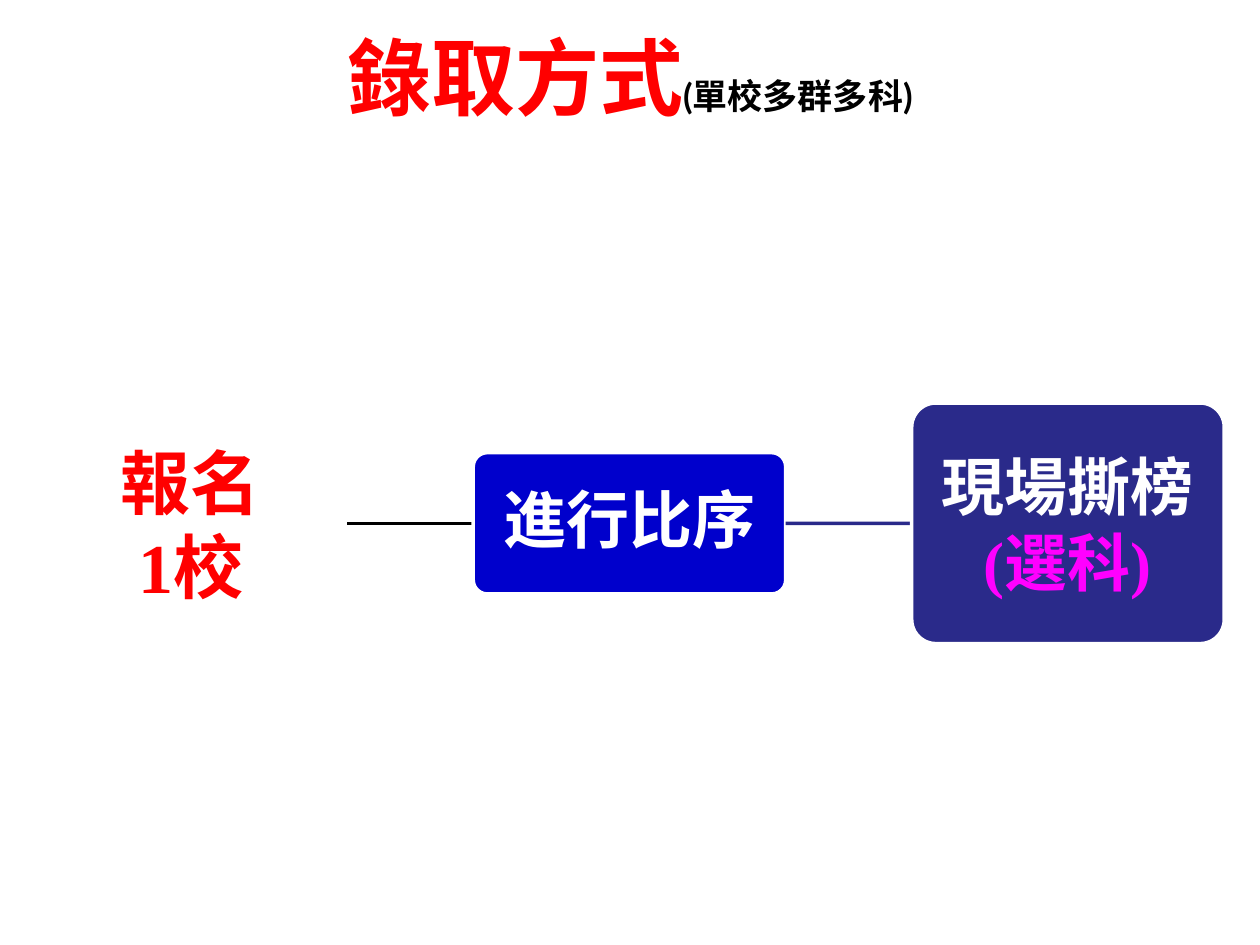
from dataclasses import dataclass

from lxml.etree import SubElement
from pptx import Presentation
from pptx.dml.color import RGBColor
from pptx.enum.shapes import MSO_CONNECTOR, MSO_SHAPE
from pptx.enum.text import MSO_ANCHOR, PP_ALIGN
from pptx.oxml.ns import qn
from pptx.util import Cm, Pt

WHITE, BLACK, RED = "FFFFFF", "000000", "FF0000"
BLUE, NAVY, MAGENTA = "0000CC", "2A2A8A", "FF00FF"

# Flow geometry in centimetres
FLOW_LEFT, FLOW_MIDDLE = 0.7, 10.55
STEP_WIDTH, STEP_PITCH = 6.3, 8.84
RIGHT_SIDE, LEFT_SIDE = 3, 1


@dataclass
class Step:
    lines: list[tuple[str, str]]  # wording and colour
    height: float
    fill: str
    size: int
    inset: float
    spacing: float = 1.0
    link: str | None = None  # colour of the line to the next step


STEPS = [
    Step([("報名", RED), ("1校", RED)], 6.45, WHITE, 40, 0.25, link=BLACK),
    Step([("進行比序", WHITE)], 2.85, BLUE, 36, 0.13, spacing=0.9, link=NAVY),
    Step([("現場撕榜", WHITE), ("(選科)", MAGENTA)], 4.85, NAVY, 36, 0.18),
]


def rgb(value: str) -> RGBColor:
    return RGBColor.from_string(value)


def add_text(paragraph, wording: str, *, size: int, color: str, font: str) -> None:
    run = paragraph.add_run()
    run.text = wording
    run.font.size = Pt(size)
    run.font.name = font
    run.font.bold = True
    run.font.color.rgb = rgb(color)


def set_frame(frame, inset: float) -> None:
    frame.word_wrap = True
    frame.vertical_anchor = MSO_ANCHOR.MIDDLE
    frame.margin_left = frame.margin_right = Cm(inset)
    frame.margin_top = frame.margin_bottom = Cm(inset)


def add_step(slide, step: Step, left: float):
    box = slide.shapes.add_shape(
        MSO_SHAPE.ROUNDED_RECTANGLE, Cm(left), Cm(FLOW_MIDDLE - step.height / 2),
        Cm(STEP_WIDTH), Cm(step.height))
    box.adjustments[0] = 0.1
    box.shadow.inherit = False
    box.fill.solid()
    box.fill.fore_color.rgb = rgb(step.fill)
    box.line.color.rgb = rgb(WHITE)
    box.line.width = Pt(2)
    frame = box.text_frame
    set_frame(frame, step.inset)
    for index, (wording, color) in enumerate(step.lines):
        paragraph = frame.add_paragraph() if index else frame.paragraphs[0]
        paragraph.alignment = PP_ALIGN.CENTER
        paragraph.line_spacing = step.spacing
        add_text(paragraph, wording, size=step.size, color=color, font="Times New Roman")
    return box


def add_link(slide, start_box, color: str, left: float):
    link = slide.shapes.add_connector(
        MSO_CONNECTOR.STRAIGHT, Cm(left + STEP_WIDTH), Cm(FLOW_MIDDLE),
        Cm(left + STEP_PITCH), Cm(FLOW_MIDDLE))
    link.line.color.rgb = rgb(color)
    link.line.width = Pt(2)
    SubElement(link._element.spPr, qn("a:effectLst"))
    link.begin_connect(start_box, RIGHT_SIDE)
    return link


def add_title(slide) -> None:
    title = slide.shapes.add_textbox(Cm(0), Cm(0.05), Cm(25.4), Cm(2.97))
    set_frame(title.text_frame, 0.13)
    heading = title.text_frame.paragraphs[0]
    heading.alignment = PP_ALIGN.CENTER
    add_text(heading, "錄取方式", size=48, color=RED, font="Lato")
    add_text(heading, "(單校多群多科)", size=20, color=BLACK, font="Lato")


def main() -> None:
    prs = Presentation()
    prs.slide_width, prs.slide_height = Cm(25.4), Cm(19.05)
    slide = prs.slides.add_slide(prs.slide_layouts[6])

    add_title(slide)

    # Each link lies below the box it leads to, whose white edge trims it
    link = None
    for index, step in enumerate(STEPS):
        left = FLOW_LEFT + index * STEP_PITCH
        box = add_step(slide, step, left)
        if link is not None:
            link.end_connect(box, LEFT_SIDE)
        link = add_link(slide, box, step.link, left) if step.link else None

    prs.save("out.pptx")


if __name__ == "__main__":
    main()
